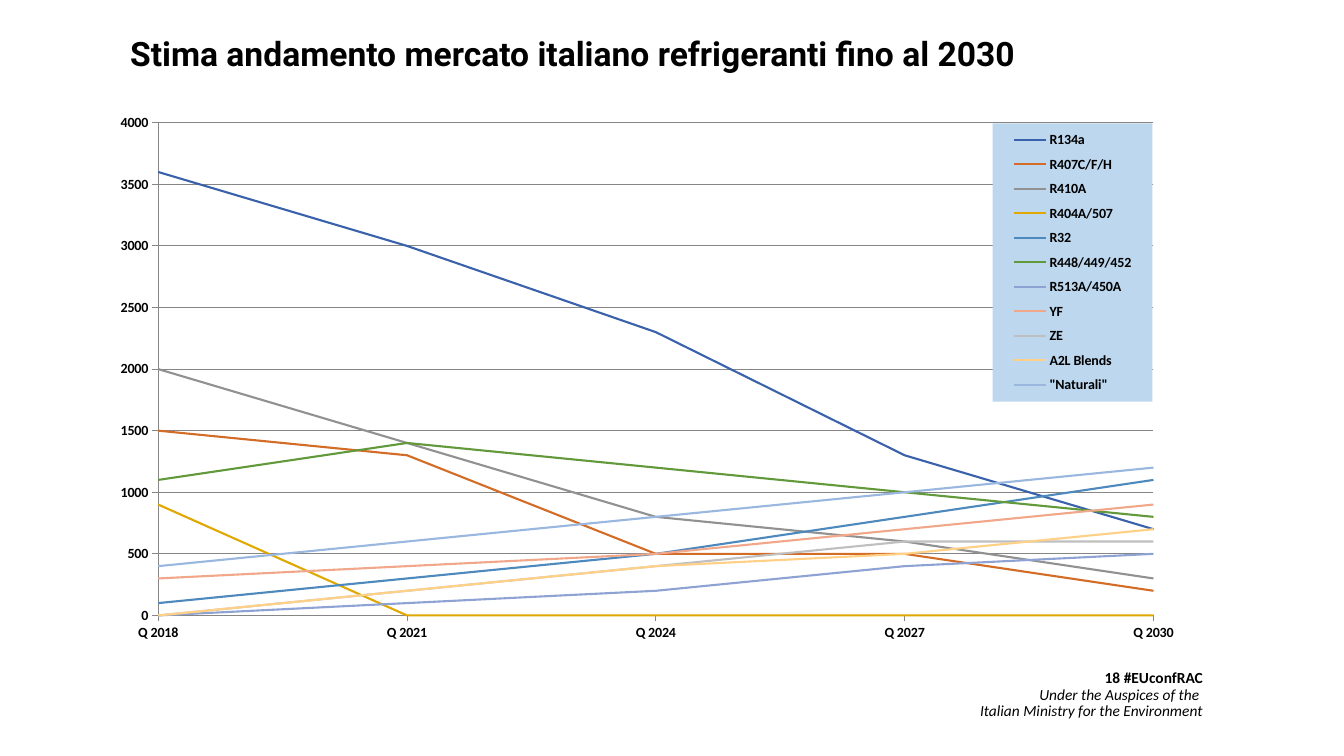
from dataclasses import dataclass

from lxml.etree import SubElement
from pptx import Presentation
from pptx.chart.data import CategoryChartData
from pptx.dml.color import RGBColor
from pptx.enum.chart import XL_CHART_TYPE, XL_LEGEND_POSITION, XL_MARKER_STYLE, XL_TICK_MARK
from pptx.enum.text import MSO_ANCHOR, MSO_AUTO_SIZE, PP_ALIGN
from pptx.oxml import parse_xml
from pptx.oxml.ns import nsdecls, qn
from pptx.util import Inches, Pt


@dataclass(frozen=True)
class Theme:
    heading_font: str = "Roboto"
    body_font: str = "Calibri"
    text: RGBColor = RGBColor(0x00, 0x00, 0x00)
    grid: RGBColor = RGBColor(0x86, 0x86, 0x86)
    legend_fill: str = "BDD7EE"
    title_size: Pt = Pt(24)
    footer_size: Pt = Pt(11)
    chart_size: Pt = Pt(10)
    series_width: Pt = Pt(1.5)
    grid_width: Pt = Pt(0.75)


theme = Theme()

quarters = ["Q 2018", "Q 2021", "Q 2024", "Q 2027", "Q 2030"]
refrigerants = [
    ("R134a ", "3A62AB", (3600, 3000, 2300, 1300, 700)),
    ("R407C/F/H", "D26C27", (1500, 1300, 500, 500, 200)),
    ("R410A", "919191", (2000, 1400, 800, 600, 300)),
    ("R404A/507", "E0A800", (900, 0, 0, 0, 0)),
    ("R32", "4E89BD", (100, 300, 500, 800, 1100)),
    ("R448/449/452", "61993B", (1100, 1400, 1200, 1000, 800)),
    ("R513A/450A", "8FA2D4", (0, 100, 200, 400, 500)),
    ("YF", "F1A78A", (300, 400, 500, 700, 900)),
    ("ZE", "BFBFBF", (0, 200, 400, 600, 600)),
    ("A2L Blends", "FFD085", (0, 200, 400, 500, 700)),
    ('"Naturali"', "9AB7DF", (400, 600, 800, 1000, 1200)),
]

deck = Presentation()
deck.slide_width, deck.slide_height = Inches(13.33), Inches(7.5)
slide = deck.slides.add_slide(deck.slide_layouts[5])


def slide_share(left, top, width, height):
    """Turn percentages of the slide's size into lengths."""
    across, down = deck.slide_width / 100, deck.slide_height / 100
    return int(left * across), int(top * down), int(width * across), int(height * down)


def set_layout(parent, position, mode, **shares):
    """Place a chart part by hand, in shares of the chart's size."""
    for automatic in parent.findall(qn("c:layout")):
        parent.remove(automatic)
    layout = parse_xml(f"<c:layout {nsdecls('c')}><c:manualLayout/></c:layout>")
    manual = layout[0]
    if mode:
        SubElement(manual, qn("c:layoutTarget")).set("val", mode)
    for edge in ("xMode", "yMode"):
        SubElement(manual, qn(f"c:{edge}")).set("val", "edge")
    for key in ("x", "y", "w", "h"):
        SubElement(manual, qn(f"c:{key}")).set("val", str(shares[key]))
    parent.insert(position, layout)


# Title
title = slide.shapes.title
title.left, title.top, title.width, title.height = slide_share(8.93, 2.53, 86.27, 9.73)
title.text_frame.word_wrap = True
title.text_frame.auto_size = MSO_AUTO_SIZE.NONE
title.text_frame.vertical_anchor = MSO_ANCHOR.MIDDLE
heading = title.text_frame.paragraphs[0]
heading.alignment = PP_ALIGN.LEFT
heading.line_spacing = 0.9
heading_run = heading.add_run()
heading_run.text = "Stima andamento mercato italiano refrigeranti fino al 2030"
heading_run.font.name = theme.heading_font
heading_run.font.size = theme.title_size
heading_run.font.bold = True
heading_run.font.color.rgb = theme.text

# Market chart
market = CategoryChartData()
market.categories = quarters
for name, _, tonnes in refrigerants:
    market.add_series(name, tonnes)
chart = slide.shapes.add_chart(
    XL_CHART_TYPE.LINE, *slide_share(6.38, 14.1, 84.25, 71.47), market
).chart
chart.has_title = False
chart.font.name = theme.body_font
chart.font.size = theme.chart_size
chart.font.color.rgb = theme.text
chart.plots[0].vary_by_categories = False

for series, (_, color, _) in zip(chart.plots[0].series, refrigerants):
    series.smooth = False
    series.marker.style = XL_MARKER_STYLE.NONE
    series.format.line.width = theme.series_width
    series.format.line.color.rgb = RGBColor.from_string(color)

quantity_axis = chart.value_axis
quantity_axis.minimum_scale, quantity_axis.maximum_scale = 0, 4000
quantity_axis.major_unit = 500
quantity_axis.has_major_gridlines = True
for axis in (chart.category_axis, quantity_axis):
    axis.major_tick_mark = XL_TICK_MARK.OUTSIDE
    axis.minor_tick_mark = XL_TICK_MARK.NONE
    axis.tick_labels.font.bold = True
for ruled in (chart.category_axis, quantity_axis, quantity_axis.major_gridlines):
    ruled.format.line.color.rgb = theme.grid
    ruled.format.line.width = theme.grid_width

# Lines start on the value axis itself
value_xml = chart._chartSpace.find(".//" + qn("c:valAx"))
crossing = value_xml.find(qn("c:crossBetween"))
if crossing is None:
    crossing = parse_xml(f"<c:crossBetween {nsdecls('c')}/>")
    value_xml.find(qn("c:crosses")).addnext(crossing)
crossing.set("val", "midCat")
set_layout(chart._chartSpace.find(".//" + qn("c:plotArea")), 0, "inner",
           x=0.064, y=0.03, w=0.879, h=0.912)

# Legend
chart.has_legend = True
legend = chart.legend
legend.position = XL_LEGEND_POSITION.RIGHT
legend.include_in_layout = False
legend.font.bold = True
legend_xml = chart._chartSpace.find(".//" + qn("c:legend"))
set_layout(legend_xml, 1, None, x=0.801, y=0.031, w=0.141, h=0.515)
legend_xml.find(qn("c:txPr")).addprevious(parse_xml(
    f"<c:spPr {nsdecls('c', 'a')}><a:solidFill>"
    f'<a:srgbClr val="{theme.legend_fill}"/></a:solidFill></c:spPr>'
))

# Conference footer
footer = slide.shapes.add_textbox(*slide_share(71.72, 88, 18.53, 9.07)).text_frame
footer.word_wrap = True
credit = footer.paragraphs[0]
credit.alignment = PP_ALIGN.RIGHT
credit.line_spacing = 0.9
footer_lines = [
    ("18 #EUconfRAC", True),
    ("Under the Auspices of the ", False),
    ("Italian Ministry for the Environment", False),
]
for row, (wording, is_hashtag) in enumerate(footer_lines):
    if row:
        credit.add_line_break()
    run = credit.add_run()
    run.text = wording
    run.font.name = theme.body_font
    run.font.size = theme.footer_size
    run.font.bold = is_hashtag
    run.font.italic = not is_hashtag
    run.font.color.rgb = theme.text

deck.save("out.pptx")
